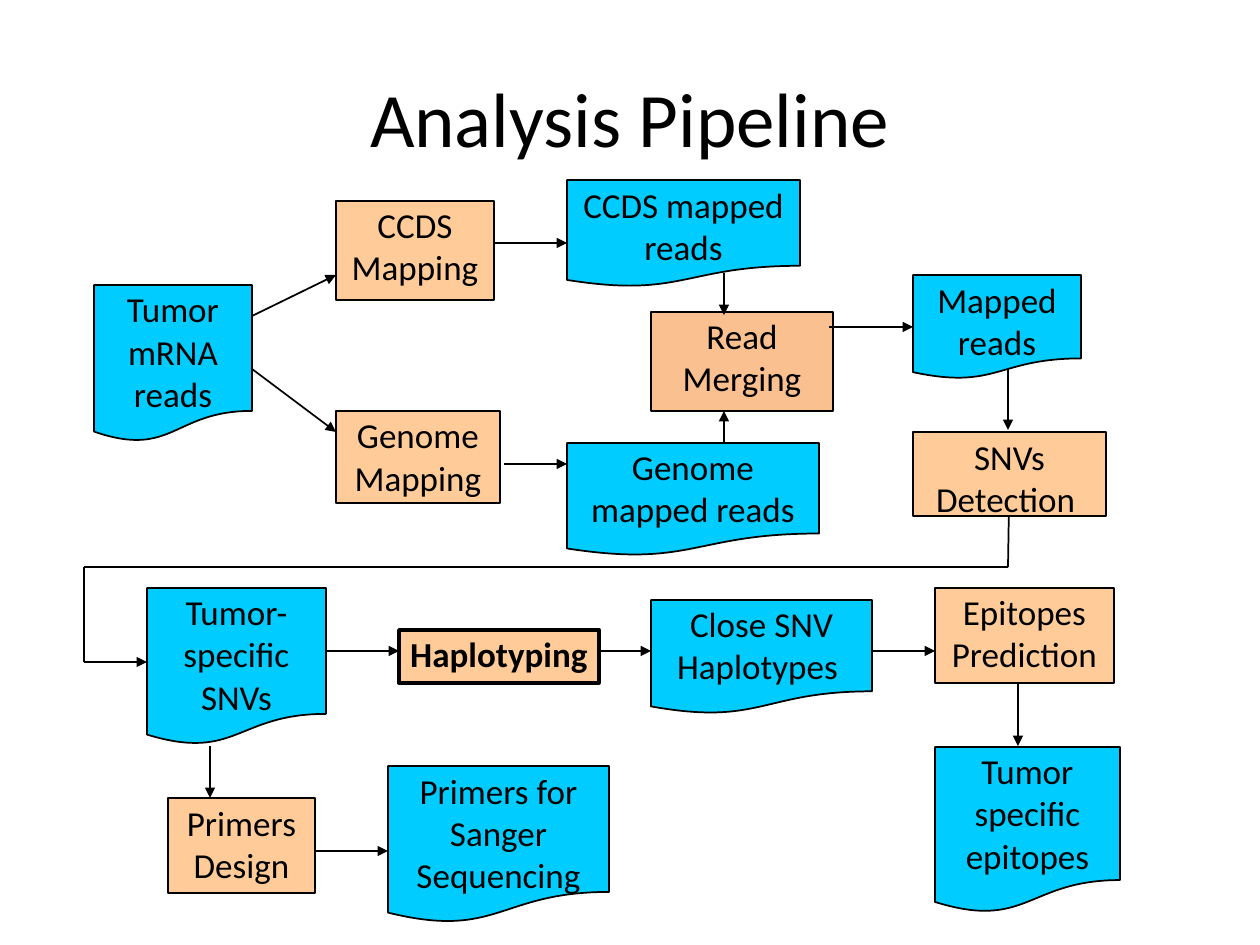
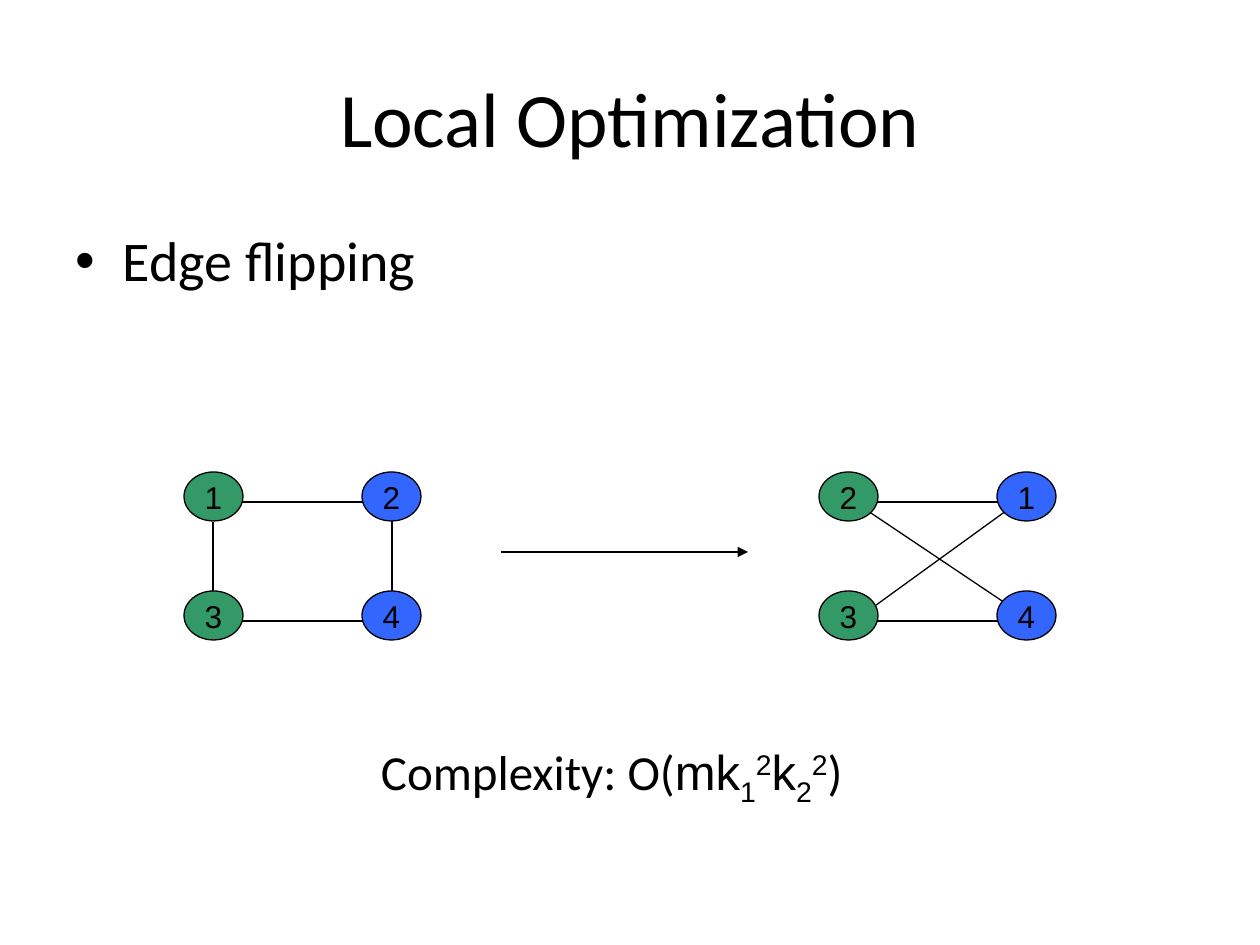
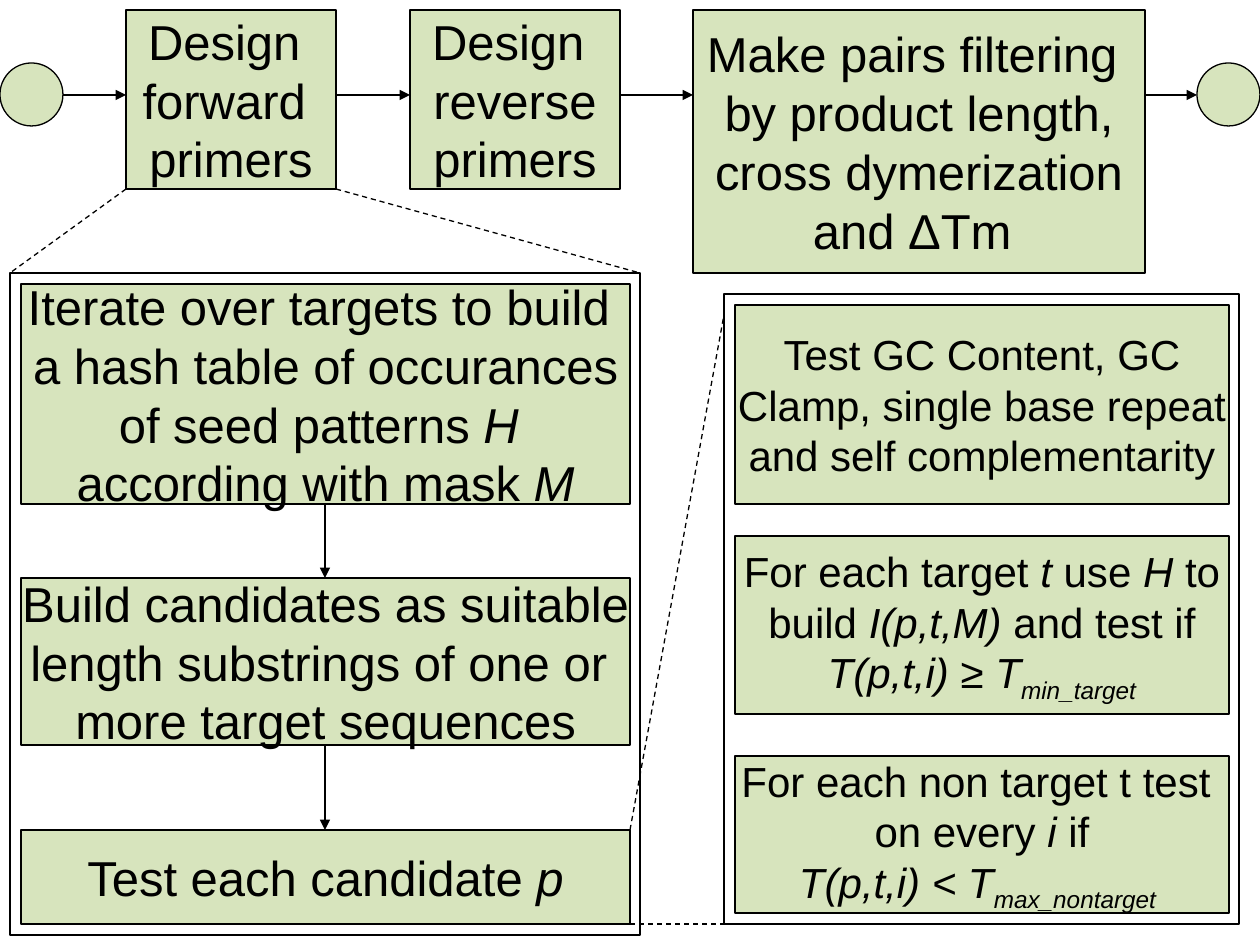
from dataclasses import dataclass
from itertools import pairwise

from pptx import Presentation
from pptx.dml.color import RGBColor
from pptx.enum.dml import MSO_LINE
from pptx.enum.shapes import MSO_CONNECTOR, MSO_SHAPE
from pptx.enum.text import MSO_ANCHOR, PP_ALIGN
from pptx.oxml.ns import qn
from pptx.util import Emu, Pt
from lxml.etree import SubElement


@dataclass(frozen=True)
class Theme:
    ink: str = "000000"
    data: str = "00CCFF"
    step: str = "FFCC99"
    merge: str = "FAC090"
    green: str = "339966"
    blue: str = "3366FF"
    pale: str = "D7E4BD"
    heading_font: str = "Calibri"
    plain_font: str = "Arial"
    title: int = 44
    bullet: int = 32
    large: int = 28
    medium: int = 24
    flow: int = 20
    small: int = 18
    thin: float = 0.75
    normal: float = 1
    thick: float = 2


THEME = Theme()
PX = 914400 / 126
PAGE_SIZE = (1260, 945)
TITLE_AREA = (63, 38, 1134, 157)
ITALIC = {"italic": True}
SUB = {"baseline": -25}
SUPER = {"baseline": 30}
ARIAL = {"font": THEME.plain_font}

# Slide 1: data documents and processing steps, as text and place
DOCUMENTS = [
    ("Tumor mRNA reads", (94, 285, 158, 157)),
    ("CCDS mapped reads", (567, 180, 233, 107)),
    ("Genome mapped reads", (567, 443, 252, 113)),
    ("Mapped reads", (913, 275, 168, 104)),
    ("Tumor-specific SNVs", (147, 588, 179, 157)),
    ("Close SNV Haplotypes ", (651, 600, 221, 114)),
    ("Tumor specific epitopes", (935, 747, 185, 166)),
    ("Primers for Sanger Sequencing", (388, 766, 221, 157)),
]
STEPS = [
    (["CCDS", "Mapping"], (336, 201, 158, 99), {}),
    (["Genome Mapping"], (336, 411, 164, 92), {}),
    (["Read Merging"], (651, 312, 182, 99), {"fill": THEME.merge}),
    (["SNVs Detection "], (913, 432, 193, 84), {}),
    (["Haplotyping"], (399, 630, 200, 53), {"weight": THEME.thick, "bold": True}),
    (["Epitopes Prediction"], (935, 588, 179, 95), {}),
    (["Primers Design"], (168, 798, 147, 95), {}),
]
RETURN_ROUTE = [(1009, 504), (1008, 567), (84, 567), (84, 662)]
PIPELINE_ARROWS = [
    (252, 316, 336, 275), (252, 369, 336, 432), (494, 243, 567, 243),
    (504, 464, 567, 464), (724, 443, 724, 411), (724, 273, 724, 315),
    (829, 327, 913, 327), (1008, 369, 1008, 430), (84, 662, 147, 662),
    (326, 651, 399, 651), (599, 651, 651, 651), (872, 651, 935, 651),
    (1018, 683, 1018, 746), (210, 746, 210, 798), (315, 851, 388, 851),
]

# Slide 2: two four-node graphs, edges measured from the graph's corner
NODE_SIZE = (59, 49)
NODE_STEP = (178, 119)
SHARED_EDGES = [(39, 30, 188, 30), (49, 149, 188, 149)]
GRAPHS = [
    ((184, 472), "1234", [(29, 50, 29, 149), (208, 39, 208, 149)]),
    ((819, 472), "2134", [(49, 139, 198, 31), (49, 39, 198, 139)]),
]
FLIP_ARROW = (501, 552, 748, 552)
COMPLEXITY = [
    "Complexity: O(", ("mk", ARIAL), ("1", ARIAL | SUB), ("2", ARIAL | SUPER),
    ("k", ARIAL), ("2", ARIAL | SUB), ("2", ARIAL | SUPER), ")",
]

# Slide 3: the top row, then the two detail panels
STAGES = [
    (["Design ", "forward ", "primers"], (126, 10, 210, 179)),
    (["Design ", "reverse", "primers"], (410, 10, 210, 179)),
    (["Make pairs filtering ", "by product length,", "cross dymerization", "and ΔTm "],
     (693, 10, 452, 263)),
]
TERMINALS = [(0, 63, 63, 63), (1197, 63, 63, 63)]
STAGE_ARROW_Y = 95
CANDIDATE_FRAME = (10, 273, 630, 662)
CANDIDATE_COLUMN = (21, 609)
CANDIDATE_STEPS = [
    (284, 220, ["Iterate over targets to build ", "a hash table of occurances",
                ["of seed patterns ", ("H ", ITALIC)],
                ["according with mask ", ("M", ITALIC)]]),
    (578, 167, ["Build candidates as suitable", "length substrings of one or ",
                "more target sequences"]),
    (830, 94, [["Test each candidate ", ("p", ITALIC)]]),
]
TEST_FRAME = (724, 294, 515, 630)
TEST_COLUMN = (735, 494)
TESTS = [
    (305, 199, ["Test GC Content, GC", "Clamp, single base repeat",
                "and self complementarity"]),
    (536, 178, [["For each target ", ("t", ITALIC), " use ", ("H", ITALIC), " to"],
                ["build ", ("I(p,t,M)", ITALIC), " and test if"],
                [("T(p,t,i) ", ITALIC), "≥ ", ("T", ITALIC),
                 ("min_target", ITALIC | SUB)]]),
    (756, 157, ["For each non target t test ",
                ["on every ", ("i ", ITALIC), "if"],
                [("T(p,t,i) < T", ITALIC), ("max_nontarget", ITALIC | SUB),
                 (" ", {"size": THEME.small})]]),
]
ZOOM_LINES = [
    (126, 189, 10, 273), (336, 189, 640, 273),
    (630, 830, 724, 315), (630, 924, 724, 924),
]


def emu(*lengths):
    return [Emu(round(length * PX)) for length in lengths]


def color(code):
    return RGBColor.from_string(code)


def write(shape, paragraphs, size, font, bold=False, align=PP_ALIGN.CENTER,
          anchor=MSO_ANCHOR.MIDDLE, wrap=True, margins=(13, 6)):
    """Fill a shape; a paragraph is a string or a list of strings and (text, format)."""
    frame = shape.text_frame
    frame.word_wrap = wrap
    frame.vertical_anchor = anchor
    frame.margin_left = frame.margin_right = emu(margins[0])[0]
    frame.margin_top = frame.margin_bottom = emu(margins[1])[0]
    for index, content in enumerate(paragraphs):
        para = frame.add_paragraph() if index else frame.paragraphs[0]
        para.alignment = align
        for part in [content] if isinstance(content, str) else content:
            text, style = (part, {}) if isinstance(part, str) else part
            span = para.add_run()
            span.text = text
            span.font.size = Pt(style.get("size", size))
            span.font.name = style.get("font", font)
            span.font.bold = bold
            span.font.italic = style.get("italic", False)
            span.font.color.rgb = color(THEME.ink)
            if "baseline" in style:
                span._r.get_or_add_rPr().set("baseline", str(style["baseline"] * 1000))


def add_text(page, place, paragraphs, **style):
    box = page.shapes.add_textbox(*emu(*place))
    write(box, paragraphs, font=THEME.heading_font, **style)
    return box


def add_box(page, kind, place, fill=None, weight=THEME.thin):
    box = page.shapes.add_shape(kind, *emu(*place))
    box.shadow.inherit = False
    if fill:
        box.fill.solid()
        box.fill.fore_color.rgb = color(fill)
    else:
        box.fill.background()
    box.line.color.rgb = color(THEME.ink)
    box.line.width = Pt(weight)
    return box


def add_line(page, ends, weight=THEME.thin, arrow=False, dashed=False):
    line = page.shapes.add_connector(MSO_CONNECTOR.STRAIGHT, *emu(*ends))
    line.line.color.rgb = color(THEME.ink)
    line.line.width = Pt(weight)
    if dashed:
        line.line.dash_style = MSO_LINE.DASH
    properties = line._element.spPr
    if arrow:
        SubElement(properties.get_or_add_ln(), qn("a:tailEnd"), type="triangle")
    SubElement(properties, qn("a:effectLst"))


def add_page(deck, title=None):
    page = deck.slides.add_slide(deck.slide_layouts[6])
    if title:
        add_text(page, TITLE_AREA, [title], size=THEME.title)
    return page


def add_flow_box(page, kind, paragraphs, place, fill, weight=THEME.normal, bold=False):
    box = add_box(page, kind, place, fill, weight)
    write(box, paragraphs, THEME.flow, THEME.heading_font, bold=bold,
          anchor=MSO_ANCHOR.TOP, margins=(5, 3))


def build_pipeline(deck):
    page = add_page(deck, "Analysis Pipeline")
    for start, end in pairwise(RETURN_ROUTE):
        add_line(page, (*start, *end), THEME.normal)
    for text, place in DOCUMENTS:
        add_flow_box(page, MSO_SHAPE.FLOWCHART_DOCUMENT, [text], place, THEME.data)
    for paragraphs, place, style in STEPS:
        add_flow_box(page, MSO_SHAPE.FLOWCHART_PROCESS, paragraphs, place,
                     **({"fill": THEME.step} | style))
    for ends in PIPELINE_ARROWS:
        add_line(page, ends, THEME.normal, arrow=True)


def build_optimization(deck):
    page = add_page(deck, "Local Optimization")
    # Bullet
    box = add_text(page, (63, 220, 1134, 103), ["Edge flipping"], size=THEME.bullet,
                   align=PP_ALIGN.LEFT, anchor=MSO_ANCHOR.TOP)
    bullet = box.text_frame.paragraphs[0]._p.get_or_add_pPr()
    indent = emu(47)[0]
    bullet.set("marL", str(indent))
    bullet.set("indent", str(-indent))
    SubElement(bullet, qn("a:buFont"), typeface=THEME.plain_font)
    SubElement(bullet, qn("a:buChar"), char="•")
    # Graphs before and after the flip
    for (left, top), labels, edges in GRAPHS:
        for x1, y1, x2, y2 in SHARED_EDGES + edges:
            add_line(page, (left + x1, top + y1, left + x2, top + y2))
        for index, label in enumerate(labels):
            row, column = divmod(index, 2)
            place = (left + column * NODE_STEP[0], top + row * NODE_STEP[1], *NODE_SIZE)
            node = add_box(page, MSO_SHAPE.OVAL, place,
                           THEME.blue if column else THEME.green)
            write(node, [label], THEME.small, THEME.plain_font, wrap=False)
    add_line(page, FLIP_ARROW, arrow=True)
    add_text(page, (368, 735, 522, 72), [COMPLEXITY], size=THEME.large,
             align=PP_ALIGN.LEFT, anchor=MSO_ANCHOR.TOP)


def add_stage(page, paragraphs, place, size=THEME.large):
    box = add_box(page, MSO_SHAPE.FLOWCHART_PROCESS, place, THEME.pale)
    write(box, paragraphs, size, THEME.plain_font, wrap=False)


def add_panel(page, frame, column, rows, size):
    add_box(page, MSO_SHAPE.RECTANGLE, frame)
    left, width = column
    for top, height, paragraphs in rows:
        add_stage(page, paragraphs, (left, top, width, height), size)


def build_primer_design(deck):
    page = add_page(deck)
    # Top row
    for place in TERMINALS:
        add_box(page, MSO_SHAPE.FLOWCHART_CONNECTOR, place, THEME.pale)
    for paragraphs, place in STAGES:
        add_stage(page, paragraphs, place)
    row = [TERMINALS[0], *(place for _, place in STAGES), TERMINALS[1]]
    for before, after in pairwise(row):
        add_line(page, (before[0] + before[2], STAGE_ARROW_Y, after[0], STAGE_ARROW_Y),
                 arrow=True)
    # Detail panels
    add_panel(page, CANDIDATE_FRAME, CANDIDATE_COLUMN, CANDIDATE_STEPS, THEME.large)
    add_panel(page, TEST_FRAME, TEST_COLUMN, TESTS, THEME.medium)
    middle = CANDIDATE_COLUMN[0] + CANDIDATE_COLUMN[1] // 2
    for (top, height, _), (next_top, *_) in pairwise(CANDIDATE_STEPS):
        add_line(page, (middle, top + height, middle, next_top), arrow=True)
    for ends in ZOOM_LINES:
        add_line(page, ends, dashed=True)


def main():
    deck = Presentation()
    deck.slide_width, deck.slide_height = emu(*PAGE_SIZE)
    build_pipeline(deck)
    build_optimization(deck)
    build_primer_design(deck)
    deck.save("out.pptx")


if __name__ == "__main__":
    main()
